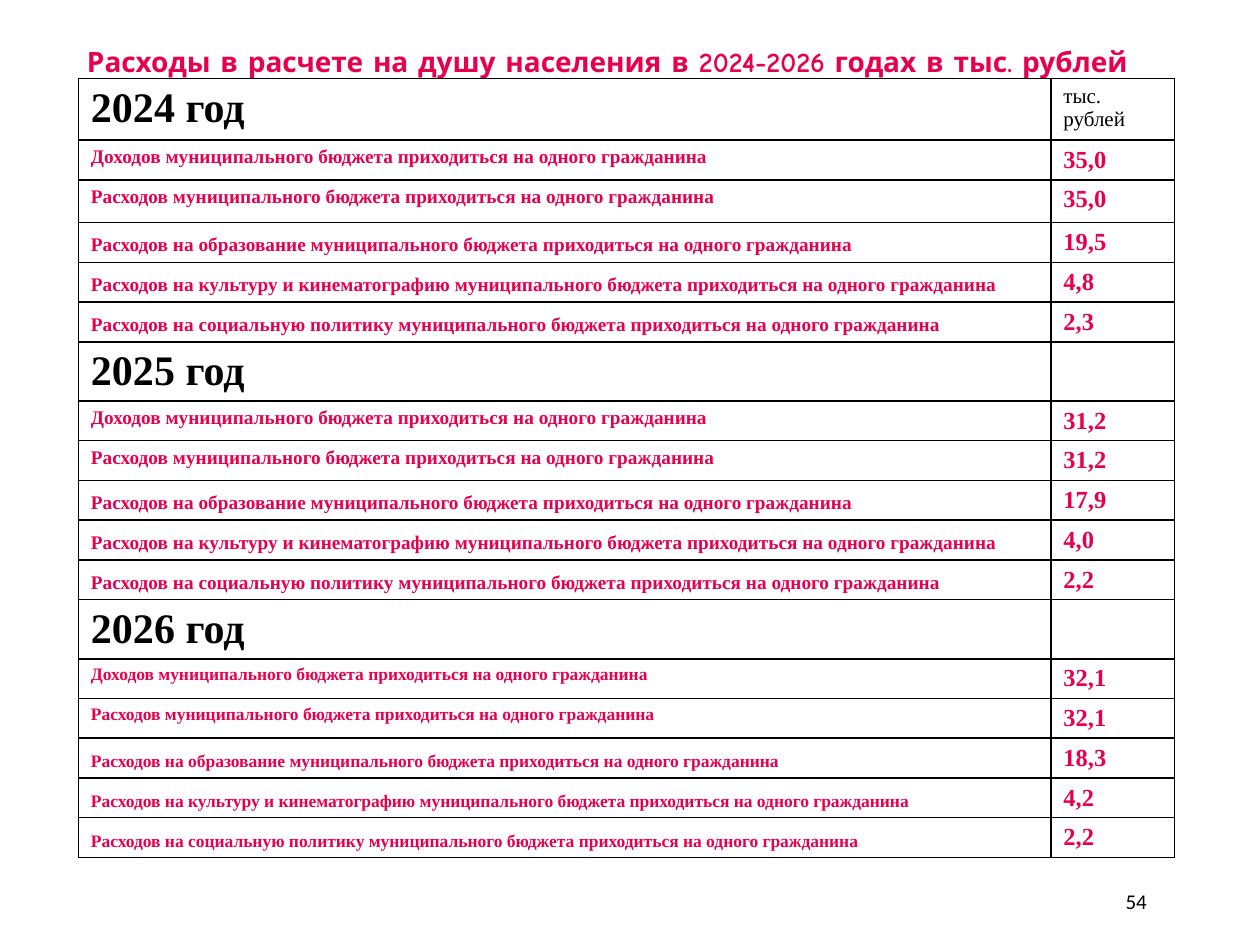
from lxml import etree
from pptx import Presentation
from pptx.dml.color import RGBColor
from pptx.enum.text import MSO_ANCHOR, MSO_AUTO_SIZE, PP_ALIGN
from pptx.oxml.ns import qn
from pptx.util import Pt

TOP, MIDDLE, BOTTOM = MSO_ANCHOR.TOP, MSO_ANCHOR.MIDDLE, MSO_ANCHOR.BOTTOM
LEFT, RIGHT = PP_ALIGN.LEFT, PP_ALIGN.RIGHT
NO_AUTOFIT = MSO_AUTO_SIZE.NONE
CRIMSON = RGBColor(0xE6, 0x00, 0x4D)
BLACK = RGBColor(0, 0, 0)
SERIF = "Times New Roman"

TITLE = "Расходы в расчете на душу населения в 2024-2026 годах в тыс. рублей"
PAGE = "54"
UNIT = "тыс. рублей"
INDICATORS = [
    ("Доходов", TOP),
    ("Расходов", TOP),
    ("Расходов на образование", BOTTOM),
    ("Расходов на культуру и кинематографию", BOTTOM),
    ("Расходов на социальную политику", BOTTOM),
]
INDICATOR_ENDING = "муниципального бюджета приходиться на одного гражданина"
YEARS = [
    ("2024 год", UNIT, 11, ["35,0", "35,0", "19,5", "4,8", "2,3"]),
    ("2025 год", "", 11, ["31,2", "31,2", "17,9", "4,0", "2,2"]),
    ("2026 год", "", 10, ["32,1", "32,1", "18,3", "4,2", "2,2"]),
]
TABLE_LEFT, TABLE_TOP = 44.8, 44.8
COLUMN_WIDTHS = [555.7, 70.7]
HEADING_HEIGHT, INDICATOR_HEIGHT = 33.6, 22.7
TALLER_ROWS = {0: 35.3, 2: 24.5}


def write(frame, text, size, font=SERIF, color=CRIMSON, bold=True, align=LEFT, anchor=TOP):
    frame.word_wrap = True
    frame.vertical_anchor = anchor
    paragraph = frame.paragraphs[0]
    paragraph.alignment = align
    run = paragraph.add_run()
    run.text = text
    run.font.size = Pt(size)
    run.font.name = font
    run.font.bold = bold
    run.font.color.rgb = color


def outline(cell):
    properties = cell._tc.get_or_add_tcPr()
    for side in ("lnL", "lnR", "lnT", "lnB"):
        border = etree.SubElement(properties, qn(f"a:{side}"), w=str(Pt(1)))
        fill = etree.SubElement(border, qn("a:solidFill"))
        etree.SubElement(fill, qn("a:srgbClr"), val=str(BLACK))
    cell.fill.background()


def fill_cell(cell, text, size, anchor=TOP, **style):
    outline(cell)
    cell.vertical_anchor = anchor
    if text:
        write(cell.text_frame, text, size, anchor=anchor, **style)


def add_expenses(slide):
    heights = ([HEADING_HEIGHT] + [INDICATOR_HEIGHT] * len(INDICATORS)) * len(YEARS)
    for row, height in TALLER_ROWS.items():
        heights[row] = height
    expenses = slide.shapes.add_table(
        len(heights), len(COLUMN_WIDTHS), Pt(TABLE_LEFT), Pt(TABLE_TOP),
        Pt(sum(COLUMN_WIDTHS)), Pt(sum(heights))).table
    expenses.first_row = expenses.horz_banding = False
    for column, width in zip(expenses.columns, COLUMN_WIDTHS):
        column.width = Pt(width)
    for row, height in zip(expenses.rows, heights):
        row.height = Pt(height)

    row = 0
    for year, unit, label_size, amounts in YEARS:
        fill_cell(expenses.cell(row, 0), year, 24, color=BLACK)
        fill_cell(expenses.cell(row, 1), unit, 12, color=BLACK, bold=False)
        row += 1
        for (indicator, anchor), amount in zip(INDICATORS, amounts):
            label = f"{indicator} {INDICATOR_ENDING}"
            fill_cell(expenses.cell(row, 0), label, label_size, anchor=anchor)
            fill_cell(expenses.cell(row, 1), amount, 14)
            row += 1


def main():
    deck = Presentation()
    deck.slide_width, deck.slide_height = Pt(720), Pt(540)
    slide = deck.slides.add_slide(deck.slide_layouts[5])
    add_expenses(slide)

    title = slide.shapes.title
    title.left, title.top, title.width, title.height = Pt(42.5), Pt(0), Pt(612.7), Pt(69.8)
    title.text_frame.auto_size = NO_AUTOFIT
    write(title.text_frame, TITLE, 16, font="Comic Neue", anchor=MIDDLE)

    page_number = slide.shapes.add_textbox(Pt(500.4), Pt(500.4), Pt(162), Pt(28.8))
    write(page_number.text_frame, PAGE, 12, font="Calibri", color=BLACK,
          bold=False, align=RIGHT, anchor=MIDDLE)
    deck.save("out.pptx")


if __name__ == "__main__":
    main()
